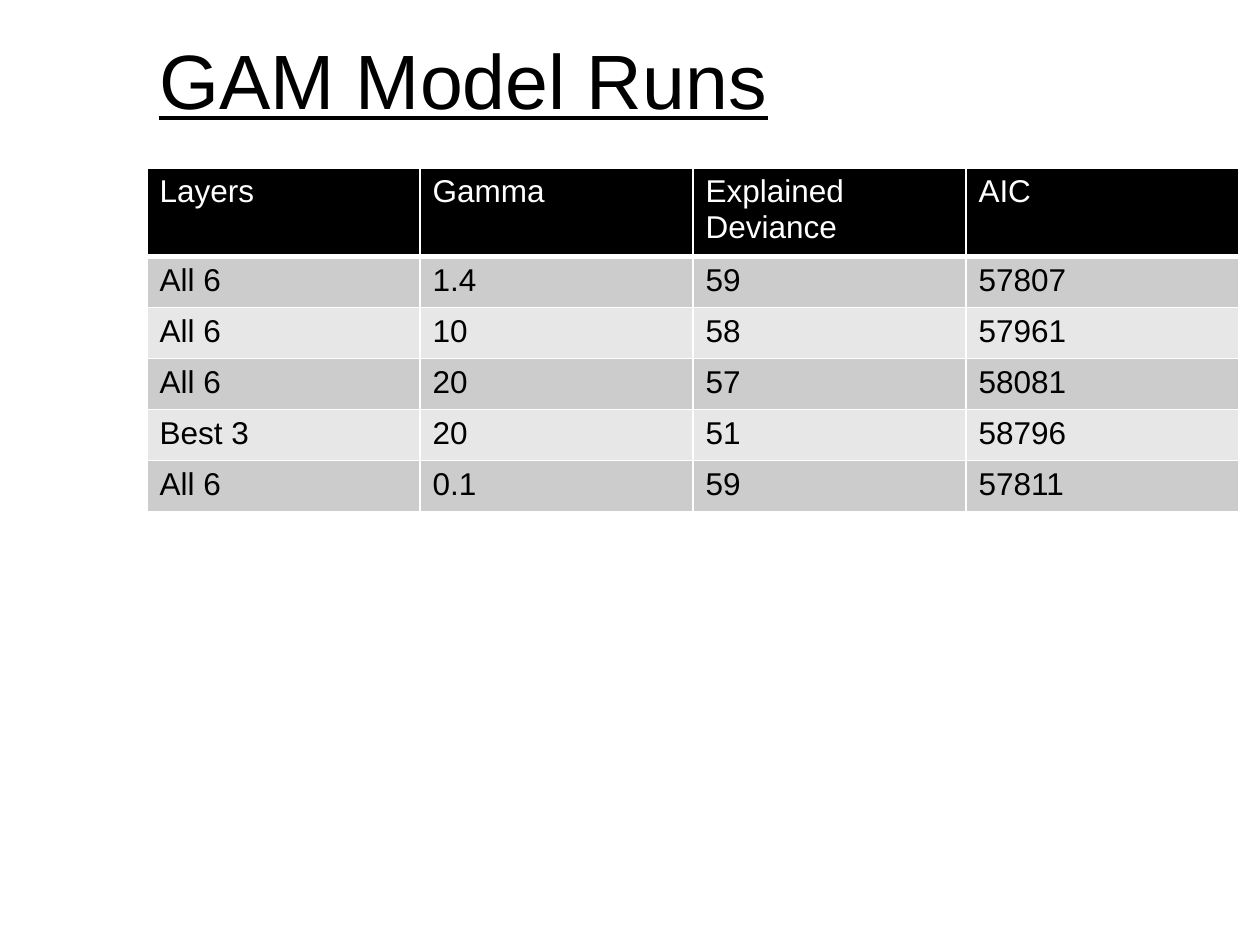
from lxml.etree import SubElement
from pptx import Presentation
from pptx.dml.color import RGBColor
from pptx.enum.text import MSO_ANCHOR
from pptx.oxml.ns import qn
from pptx.util import Pt

COLORS = {"ink": "000000", "paper": "FFFFFF", "odd": "CCCCCC", "even": "E7E7E7"}
HEADERS = ["Layers", "Gamma", "Explained Deviance", "AIC"]
RUNS = [
    ["All 6", "1.4", "59", "57807"],
    ["All 6", "10", "58", "57961"],
    ["All 6", "20", "57", "58081"],
    ["Best 3", "20", "51", "58796"],
    ["All 6", "0.1", "59", "57811"],
]


def write(tf, text, size=18, color="ink", font="Arial", underline=None):
    p = tf.paragraphs[0]
    r = p.add_run()
    r.text = text
    r.font.name = font
    r.font.size = Pt(size)
    r.font.underline = underline
    r.font.color.rgb = RGBColor.from_string(COLORS[color])


class Deck:
    """Holds the table style and the current slide."""

    left, width, row_height = 84, 624, 29.2
    border, header_border = 1, 3

    def __init__(self, prs):
        self.s = prs.slides.add_slide(prs.slide_layouts[6])

    def title(self, text, top, height):
        sp = self.s.shapes.add_textbox(Pt(self.left), Pt(top), Pt(self.width), Pt(height))
        tf = sp.text_frame
        tf.word_wrap = True
        tf.vertical_anchor = MSO_ANCHOR.MIDDLE
        write(tf, text, size=44, underline=True)

    def borders(self, cell, top, bottom):
        tcPr = cell._tc.get_or_add_tcPr()
        widths = {"lnL": self.border, "lnR": self.border, "lnT": top, "lnB": bottom}
        for side, width in widths.items():
            ln = SubElement(tcPr, qn(f"a:{side}"), w=str(Pt(width)))
            fill = SubElement(ln, qn("a:solidFill"))
            SubElement(fill, qn("a:srgbClr"), val=COLORS["paper"])

    def table(self, rows, top):
        n, m = len(rows), len(rows[0])
        frame = self.s.shapes.add_table(
            n, m, Pt(self.left), Pt(top), Pt(self.width), Pt(n * self.row_height))
        for i, row in enumerate(rows):
            fill = "ink" if i == 0 else ("odd" if i % 2 else "even")
            for j, text in enumerate(row):
                cell = frame.table.cell(i, j)
                self.borders(cell,
                             self.header_border if i == 1 else self.border,
                             self.header_border if i == 0 else self.border)
                cell.fill.solid()
                cell.fill.fore_color.rgb = RGBColor.from_string(COLORS[fill])
                write(cell.text_frame, text, color="paper" if i == 0 else "ink")


def main():
    prs = Presentation()
    prs.slide_width, prs.slide_height = Pt(720), Pt(540)
    deck = Deck(prs)
    deck.title("GAM Model Runs", top=0, height=90)
    deck.table([HEADERS] + RUNS, top=96)
    prs.save("out.pptx")


if __name__ == "__main__":
    main()
